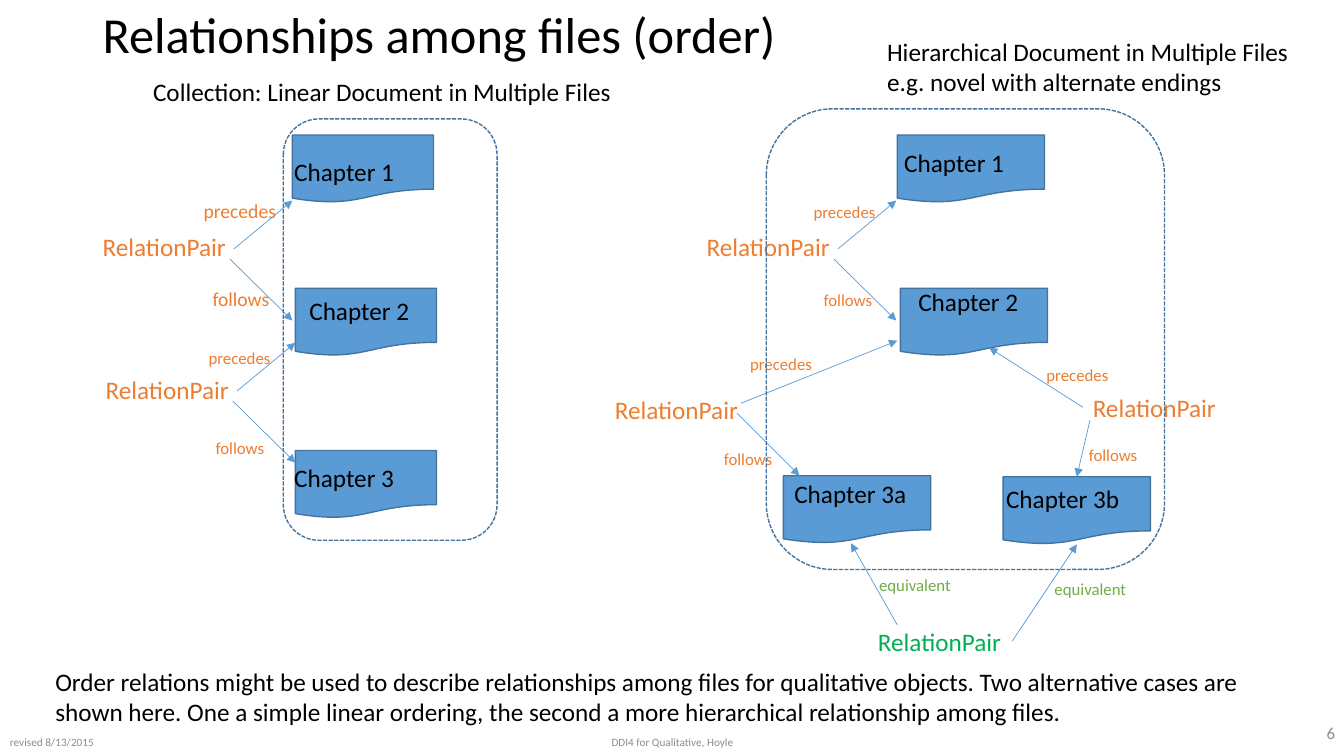
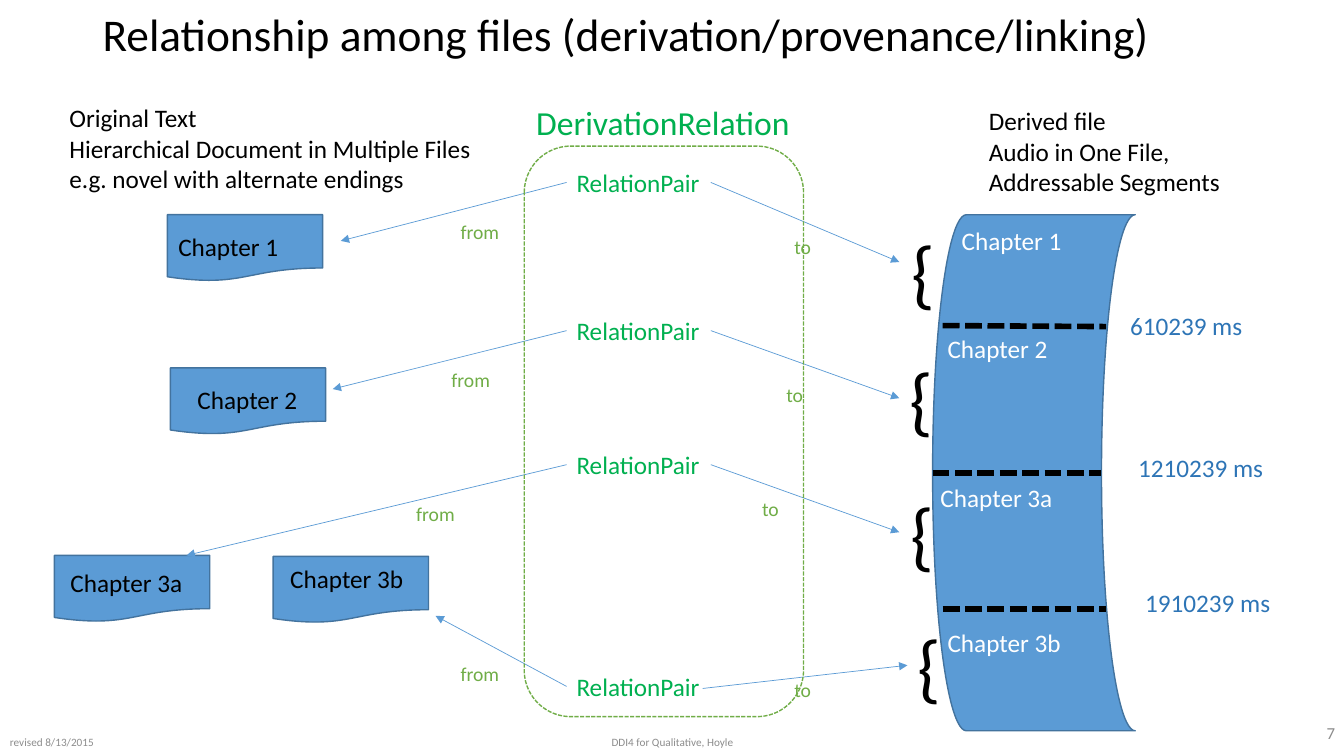
from dataclasses import dataclass

from lxml import etree
from pptx import Presentation
from pptx.dml.color import RGBColor
from pptx.enum.dml import MSO_LINE
from pptx.enum.shapes import MSO_CONNECTOR, MSO_SHAPE
from pptx.enum.text import MSO_ANCHOR, MSO_AUTO_SIZE, PP_ALIGN
from pptx.oxml.ns import qn
from pptx.util import Inches, Pt

STRAIGHT = MSO_CONNECTOR.STRAIGHT
DOCUMENT = MSO_SHAPE.FLOWCHART_DOCUMENT
STORAGE = MSO_SHAPE.FLOWCHART_STORED_DATA
ROUNDED = MSO_SHAPE.ROUNDED_RECTANGLE
SYS_DASH = MSO_LINE.SQUARE_DOT
TOP, MIDDLE = MSO_ANCHOR.TOP, MSO_ANCHOR.MIDDLE
LEFT, CENTER, RIGHT = PP_ALIGN.LEFT, PP_ALIGN.CENTER, PP_ALIGN.RIGHT
GROW, FIXED = MSO_AUTO_SIZE.SHAPE_TO_FIT_TEXT, MSO_AUTO_SIZE.NONE


@dataclass(frozen=True)
class Theme:
    font: str = "Calibri"
    black: str = "000000"
    white: str = "FFFFFF"
    grey: str = "8C8C8C"
    blue: str = "5B9BD5"
    outline: str = "43739E"
    time: str = "2E75B6"
    orange: str = "ED7D31"
    green: str = "00B050"
    olive: str = "70AD47"
    title: float = 36
    heading: float = 24
    body: float = 18
    label: float = 14
    small: float = 12
    footer: float = 8
    brace: float = 54


T = Theme()

# Width of each short label at body size, without insets
LABEL_WIDTH = {
    "RelationPair": 1.24, "precedes": 0.93, "follows": 0.74,
    "equivalent": 1.08, "from": 0.5, "to": 0.22,
    "Chapter 1": 1.0, "Chapter 2": 1.0, "Chapter 3": 1.0,
    "Chapter 3a": 1.13, "Chapter 3b": 1.14,
    "610239 ms": 1.13, "1210239 ms": 1.26, "1910239 ms": 1.26,
}


def rgb(color):
    return RGBColor.from_string(color)


def add_text(slide, text, x, y, w=None, h=None, size=T.body, color=T.black,
             align=LEFT, anchor=TOP, wrap=False, spacing=None):
    """Without w or h the box is sized to its text."""
    lines = text.split("\n")
    if w is None:
        w = 0.2 + LABEL_WIDTH[text] * size / T.body
    fitted = h is None
    if fitted:
        h = 0.1 + len(lines) * size * 1.2 / 72
    box = slide.shapes.add_textbox(Inches(x), Inches(y), Inches(w), Inches(h))
    tf = box.text_frame
    tf.word_wrap = wrap
    tf.auto_size = GROW if fitted else FIXED
    tf.vertical_anchor = anchor
    for i, line in enumerate(lines):
        p = tf.add_paragraph() if i else tf.paragraphs[0]
        p.alignment = align
        if spacing:
            p.line_spacing = spacing
        r = p.add_run()
        r.text = line
        r.font.name = T.font
        r.font.size = Pt(size)
        r.font.color.rgb = rgb(color)
    return box


def add_box(slide, kind, x, y, w, h, fill=None, line=T.outline, dash=None):
    sp = slide.shapes.add_shape(kind, Inches(x), Inches(y), Inches(w), Inches(h))
    sp.shadow.inherit = False
    if fill:
        sp.fill.solid()
        sp.fill.fore_color.rgb = rgb(fill)
    else:
        sp.fill.background()
    sp.line.color.rgb = rgb(line)
    sp.line.width = Pt(1)
    if dash:
        sp.line.dash_style = dash
    return sp


def add_line(slide, start, end, color=T.blue, width=0.5, dash=None, arrow=True):
    """end is a point, or a (shape, site) pair to be joined."""
    joined = not isinstance(end[0], (int, float))
    target = start if joined else end
    points = [Inches(v) for v in (*start, *target)]
    line = slide.shapes.add_connector(STRAIGHT, *points)
    if joined:
        line.end_connect(*end)
    line.line.color.rgb = rgb(color)
    line.line.width = Pt(width)
    if dash:
        line.line.dash_style = dash
    if arrow:
        ln = line.line._get_or_add_ln()
        etree.SubElement(ln, qn("a:tailEnd"), type="triangle")
    etree.SubElement(line._element.spPr, qn("a:effectLst"))
    return line


def add_slide(prs, title, number, size=T.title):
    slide = prs.slides.add_slide(prs.slide_layouts[6])
    add_text(slide, title, 0.92, 0, 11.5, 0.73, size=size, anchor=MIDDLE,
             wrap=True, spacing=0.9)
    # Footer
    for text, x, y, w, h, pt, align in (
            ("revised 8/13/2015", 0, 7.23, 1.08, 0.26, T.footer, LEFT),
            ("DDI4 for Qualitative, Hoyle", 4.42, 7.23, 4.5, 0.26, T.footer, CENTER),
            (str(number), 12.42, 7.11, 0.92, 0.32, T.small, RIGHT)):
        add_text(slide, text, x, y, w, h, size=pt, color=T.grey, align=align,
                 anchor=MIDDLE, wrap=True)
    return slide


def documents(slide, x, y, w, h, items):
    """items: name, document offset, offset of the name in the document."""
    shapes = {}
    for name, (dx, dy), (tx, ty) in items:
        shapes[name] = add_box(slide, DOCUMENT, x + dx, y + dy, w, h, T.blue)
        add_text(slide, name, x + dx + tx, y + dy + ty)
    return shapes


def relation_pair(slide, x, y, links, color=T.orange, label_color=T.orange):
    """links: word, size, word offset, arrow start offset, arrow end."""
    add_text(slide, "RelationPair", x, y, color=color)
    for word, size, (tx, ty), (sx, sy), end in links:
        if isinstance(end[0], (int, float)):
            end = (x + end[0], y + end[1])
        add_line(slide, (x + sx, y + sy), end)
        add_text(slide, word, x + tx, y + ty, size=size, color=label_color)


def order_pair(slide, x, y, size, precedes_at, follows_at):
    """Pair to the left of two consecutive documents."""
    relation_pair(slide, x, y, [
        ("precedes", size, precedes_at, (1.4, 0.22), (1.98, -0.26)),
        ("follows", size, follows_at, (1.36, 0.32), (1.98, 0.93))])


# Order slide
def linear_collection(slide, x, y, w, h):
    add_text(slide, "Collection: Linear Document in Multiple Files",
             x - 1.39, y - 0.47, 4.8)
    documents(slide, x, y, 1.4, 0.67, [
        ("Chapter 1", (0.09, 0.16), (-0.08, 0.16)),
        ("Chapter 2", (0.12, 1.68), (0.04, 0.02)),
        ("Chapter 3", (0.12, 3.29), (-0.11, 0.07))])
    order_pair(slide, x - 1.89, y + 1.07, T.label, (1, -0.33), (1.09, 0.55))
    order_pair(slide, x - 1.86, y + 2.48, T.small, (1.02, -0.26), (1.09, 0.63))
    add_box(slide, ROUNDED, x, y, w, h, dash=SYS_DASH)


def hierarchical_collection(slide, x, y, w, h):
    add_text(slide, "Hierarchical Document in Multiple Files\n"
             "e.g. novel with alternate endings", x + 1.1, y - 0.77, 4.23)
    docs = documents(slide, x, y, 1.46, 0.67, [
        ("Chapter 1", (1.3, 0.26), (-0.03, 0.07)),
        ("Chapter 2", (1.33, 1.78), (0.08, -0.07)),
        ("Chapter 3a", (0.17, 3.64), (0.01, -0.02)),
        ("Chapter 3b", (2.35, 3.65), (-0.07, 0.02))])
    ending_b = docs["Chapter 3b"]
    order_pair(slide, x - 0.69, y + 1.17, T.small, (1.06, -0.3), (1.16, 0.58))
    # Alternate endings
    relation_pair(slide, x + 3.14, y + 2.76, [
        ("precedes", T.small, (-0.46, -0.27), (0, 0.2), (-0.93, -0.39)),
        ("follows", T.small, (-0.04, 0.52), (0.07, 0.33), (ending_b, 0))])
    relation_pair(slide, x - 1.6, y + 2.78, [
        ("precedes", T.small, (1.34, -0.4), (1.35, 0.14), (2.9, -0.48)),
        ("follows", T.small, (1.08, 0.54), (1.31, 0.24), (1.93, 0.86))])
    relation_pair(slide, x + 1.01, y + 5.08, [
        ("equivalent", T.small, (0.01, -0.51), (0.29, 0.04), (-0.17, -0.77)),
        ("equivalent", T.small, (1.75, -0.47), (1.43, 0.2), (ending_b, 2))],
        color=T.green, label_color=T.olive)
    add_box(slide, ROUNDED, x, y, w, h, dash=SYS_DASH)


def order_slide(prs):
    slide = add_slide(prs, "Relationships among files (order)", 6)
    linear_collection(slide, 2.81, 1.18, 2.12, 4.18)
    hierarchical_collection(slide, 7.6, 1.08, 3.95, 4.57)
    add_text(slide, "Order relations might be used to describe relationships among "
             "files for qualitative objects. Two alternative cases are\n"
             "shown here. One a simple linear ordering, the second a more "
             "hierarchical relationship among files.", 0.45, 6.56, 12.13)


# Derivation slide
def source_text(slide, x, y):
    add_text(slide, "Original Text\nHierarchical Document in Multiple Files\n"
             "e.g. novel with alternate endings", x + 0.05, y, 4.23)
    documents(slide, x, y, 1.54, 0.66, [
        ("Chapter 1", (1.12, 1.16), (0.01, 0.12)),
        ("Chapter 2", (1.15, 2.68), (0.17, 0.11)),
        ("Chapter 3a", (0, 4.54), (0.06, 0.07)),
        ("Chapter 3b", (2.17, 4.55), (0.07, 0.02))])


def audio_file(slide, x, y, w, h):
    add_box(slide, STORAGE, x, y, w, h, T.blue)
    add_text(slide, "Derived file\nAudio in One File,\nAddressable Segments",
             x + 0.46, y - 1.13, 2.52)
    # Segment boundaries and their times
    for time, (sx, sy), (ex, ey), (tx, ty) in (
            ("610239 ms", (0.1, 1.1), (1.72, 1.11), (1.86, 0.9)),
            ("1210239 ms", (0, 2.56), (1.67, 2.56), (1.94, 2.31)),
            ("1910239 ms", (0.1, 3.91), (1.72, 3.91), (2.01, 3.65))):
        add_line(slide, (x + sx, y + sy), (x + ex, y + ey), color=T.black,
                 width=4, dash=SYS_DASH, arrow=False)
        add_text(slide, time, x + tx, y + ty, color=T.time)
    # Segments with their braces
    for name, (tx, ty), (bx, by) in (
            ("Chapter 1", (0.19, 0.06), (-0.31, 0.05)),
            ("Chapter 2", (0.05, 1.13), (-0.33, 1.31)),
            ("Chapter 3a", (-0.02, 2.61), (-0.32, 2.65)),
            ("Chapter 3b", (0.05, 4.04), (-0.25, 3.96))):
        add_text(slide, name, x + tx, y + ty, color=T.white)
        add_text(slide, "{", x + bx, y + by, 0.55, size=T.brace, wrap=True)


def derivation_relation(slide, x, y, w, h):
    add_text(slide, "DerivationRelation", x + 0.02, y - 0.49, 2.74,
             size=T.heading, color=T.green)
    # Pair top, then word offset and arrow end for each side
    for dy, from_at, from_end, to_at, to_start, to_end in (
            (0.16, (-1.15, 0.52), (-2.24, 0.78), (2.16, 0.67), (1.43, 0.2), (3.3, 0.99)),
            (1.63, (-1.24, 0.52), (-2.32, 0.78), (2.08, 0.67), (1.43, 0.2), (3.3, 0.87)),
            (2.96, (-1.59, 0.52), (-3.77, 1.1), (1.84, 0.47), (1.43, 0.2), (3.3, 0.87)),
            (5.16, (-1.15, -0.09), (-1.3, -0.5), (2.16, 0.07), (1.35, 0.22), (3.38, -0.01))):
        relation_pair(slide, x + 0.42, y + dy, [
            ("from", T.label, from_at, (0, 0.2), from_end),
            ("to", T.label, to_at, to_start, to_end)],
            color=T.green, label_color=T.olive)
    add_box(slide, ROUNDED, x, y, w, h, line=T.olive, dash=SYS_DASH)


def derivation_slide(prs):
    slide = add_slide(prs, "Relationship among files (derivation/provenance/linking)",
                      7, size=T.title * 0.9)
    source_text(slide, 0.54, 0.97)
    audio_file(slide, 9.25, 2.13, 2.01, 5.12)
    derivation_relation(slide, 5.2, 1.45, 2.77, 5.66)


def main():
    prs = Presentation()
    prs.slide_width, prs.slide_height = Inches(13.33), Inches(7.5)
    order_slide(prs)
    derivation_slide(prs)
    prs.save("out.pptx")


if __name__ == "__main__":
    main()
